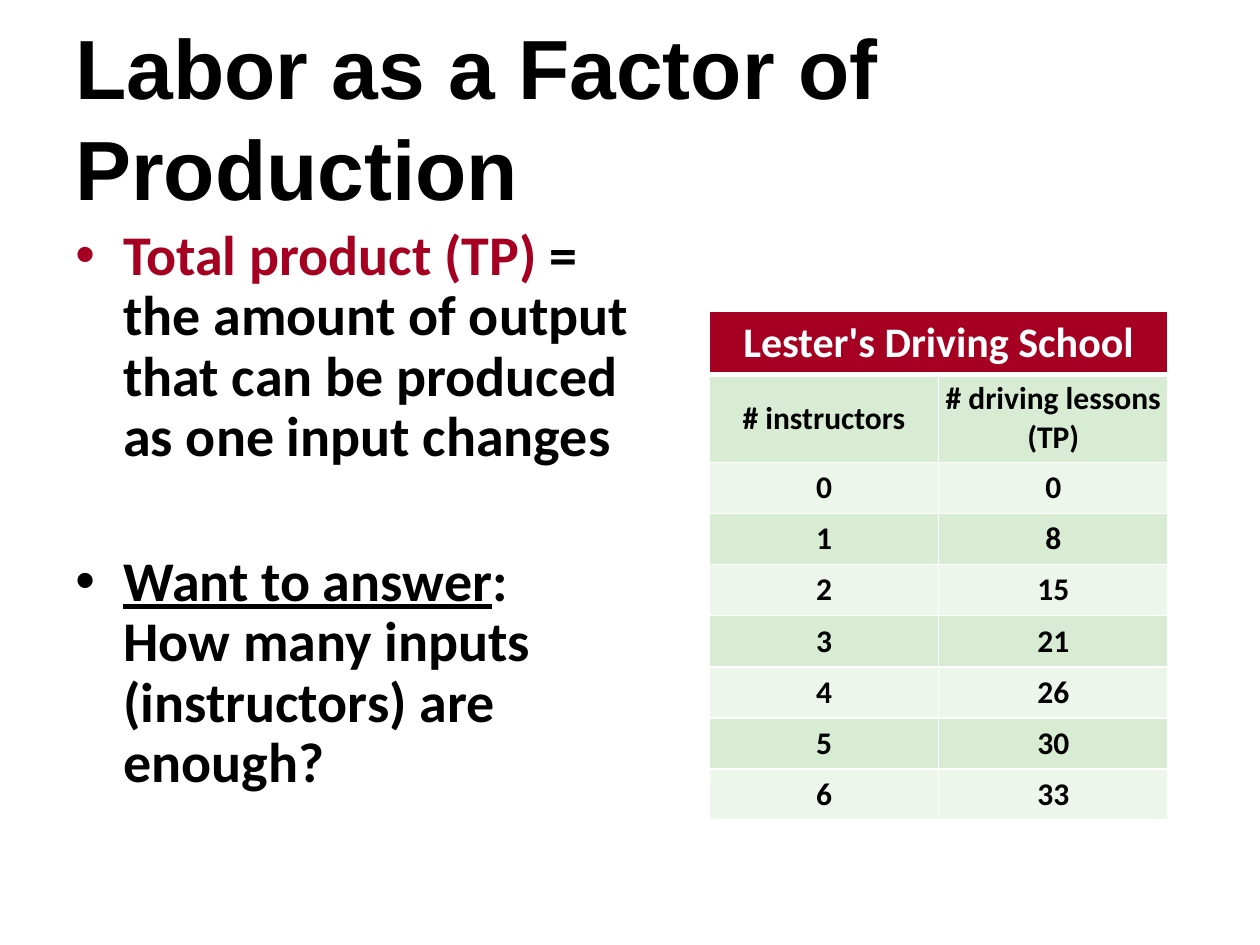
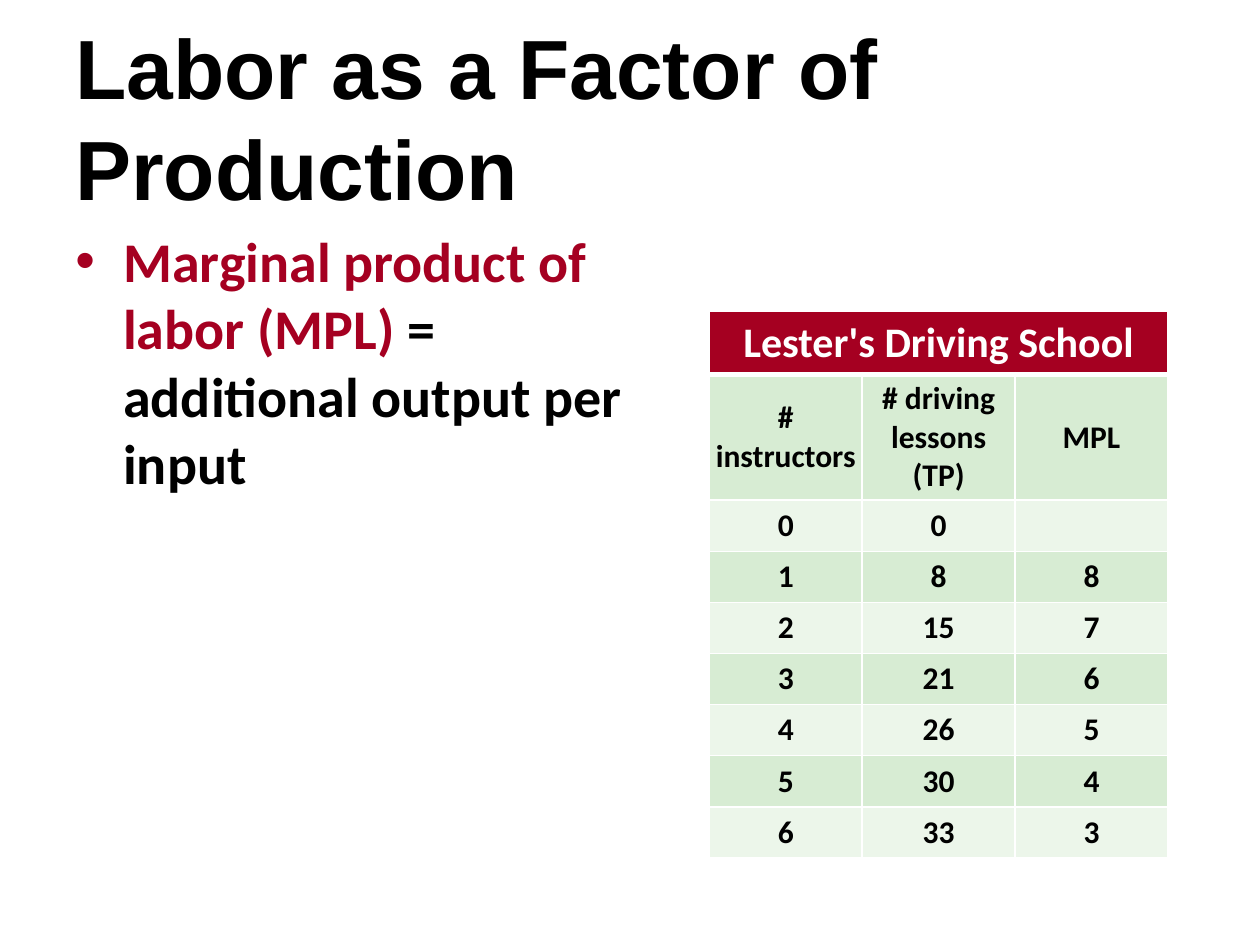
"""Builds two slides on total and marginal product of labor."""
from lxml.etree import SubElement
from pptx import Presentation
from pptx.dml.color import RGBColor
from pptx.enum.text import MSO_ANCHOR, PP_ALIGN
from pptx.oxml.ns import qn
from pptx.util import Inches, Pt

CRIMSON = RGBColor(0xA5, 0x00, 0x21)
BLACK = RGBColor(0x00, 0x00, 0x00)
WHITE = RGBColor(0xFF, 0xFF, 0xFF)
GREEN = RGBColor(0xD7, 0xEC, 0xD3)
PALE_GREEN = RGBColor(0xEC, 0xF6, 0xEA)

HEADING = "Labor as a Factor of Production"
SCHOOL = "Lester's Driving School"
LESSONS = [0, 8, 15, 21, 26, 30, 33]


def write(paragraph, text, size=32, font="Calibri", color=BLACK, underline=None):
    run = paragraph.add_run()
    run.text = text
    run.font.size = Pt(size)
    run.font.name = font
    run.font.bold = True
    run.font.underline = underline
    run.font.color.rgb = color


def add_solid_color(parent, tag, color):
    SubElement(SubElement(parent, qn(tag)), qn("a:srgbClr"), val=str(color))


class LessonDeck:
    def __init__(self):
        self.deck = Presentation()
        self.deck.slide_width = Inches(10)
        self.deck.slide_height = Inches(7.5)
        self.slide = None

    def start_slide(self):
        self.slide = self.deck.slides.add_slide(self.deck.slide_layouts[6])
        heading = self.add_text_frame(0.3, 9, 1.25)
        heading.vertical_anchor = MSO_ANCHOR.MIDDLE
        write(heading.paragraphs[0], HEADING, size=48, font="Arial")

    def add_text_frame(self, top, width, height):
        frame = self.slide.shapes.add_textbox(
            Inches(0.5), Inches(top), Inches(width), Inches(height)).text_frame
        frame.word_wrap = True
        return frame

    def add_bullets(self, *points, line_spacing=1.0, gap=48):
        body = self.add_text_frame(1.75, 4.65, 4.95)
        for index, (bullet_color, pieces) in enumerate(points):
            point = body.add_paragraph() if index else body.paragraphs[0]
            point.line_spacing = line_spacing
            point.space_before = Pt(gap if index else 0)
            self.set_bullet(point, bullet_color)
            for text, style in pieces:
                if text == "\n":
                    point.add_line_break()
                else:
                    write(point, text, **style)

    def set_bullet(self, point, color):
        properties = point._p.get_or_add_pPr()
        properties.set("marL", str(Inches(0.38)))
        properties.set("indent", str(-Inches(0.38)))
        add_solid_color(properties, "a:buClr", color)
        SubElement(properties, qn("a:buFont"), typeface="Arial")
        SubElement(properties, qn("a:buChar"), char="•")

    def add_schedule(self, headers, rows, header_height):
        width, title_height, data_height = 3.64, 0.5, 2.84
        columns = len(headers)
        contents = [[SCHOOL] + [""] * (columns - 1), headers, *rows]
        schedule = self.slide.shapes.add_table(
            len(contents), columns, Inches(5.63), Inches(2.47), Inches(width),
            Inches(title_height + header_height + data_height)).table
        schedule.first_row = schedule.horz_banding = False
        for column in schedule.columns:
            column.width = Inches(width / columns)
        heights = [title_height, header_height] + [data_height / len(rows)] * len(rows)
        for row_index, (height, values) in enumerate(zip(heights, contents)):
            schedule.rows[row_index].height = Inches(height)
            for column_index, value in enumerate(values):
                self.fill_cell(schedule.cell(row_index, column_index), value, row_index)
        schedule.cell(0, 0).merge(schedule.cell(0, columns - 1))

    def fill_cell(self, cell, value, row_index):
        cell.margin_left = cell.margin_right = cell.margin_top = cell.margin_bottom = 0
        cell.vertical_anchor = MSO_ANCHOR.MIDDLE
        thickness = {"L": 1, "R": 1, "T": 3 if row_index == 1 else 1,
                     "B": 3 if row_index == 0 else 1}
        for side, points in thickness.items():
            border = SubElement(cell._tc.get_or_add_tcPr(), qn(f"a:ln{side}"),
                                w=str(Pt(points)))
            add_solid_color(border, "a:solidFill", WHITE)
        cell.fill.solid()
        is_title = row_index == 0
        band = GREEN if row_index % 2 else PALE_GREEN
        cell.fill.fore_color.rgb = CRIMSON if is_title else band
        paragraph = cell.text_frame.paragraphs[0]
        paragraph.alignment = PP_ALIGN.CENTER
        if value != "":
            write(paragraph, str(value), size=24 if is_title else 18,
                  color=WHITE if is_title else BLACK)


def main():
    lesson = LessonDeck()
    term = {"color": CRIMSON}
    headers = ["# instructors", "# driving lessons (TP)"]

    lesson.start_slide()
    lesson.add_bullets(
        (CRIMSON, [("Total product (TP) ", term),
                   ("= the amount of output that can be produced as one input changes", {})]),
        (BLACK, [("Want to answer", {"underline": True}), (":", {}), ("\n", {}),
                 ("How many inputs (instructors) are enough?", {})]),
        line_spacing=0.9)
    lesson.add_schedule(headers, list(enumerate(LESSONS)), header_height=0.7)

    lesson.start_slide()
    lesson.add_bullets(
        (CRIMSON, [("Marginal product of labor (MPL) ", term),
                   ("= additional output per input", {})]))
    marginal = [""] + [after - before for before, after in zip(LESSONS, LESSONS[1:])]
    lesson.add_schedule(headers + ["MPL"],
                        list(zip(range(len(LESSONS)), LESSONS, marginal)),
                        header_height=1)

    lesson.deck.save("out.pptx")


if __name__ == "__main__":
    main()
